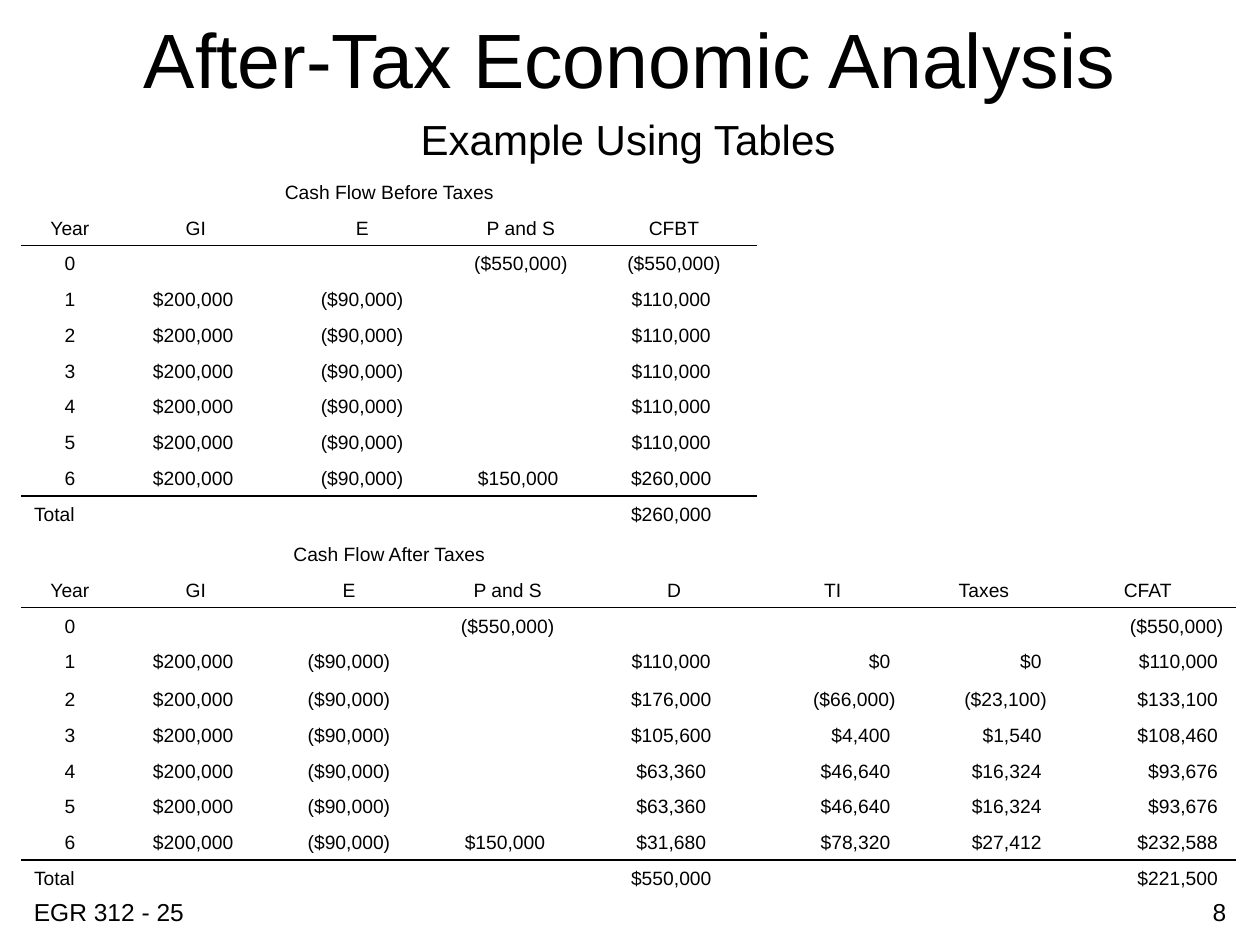
from lxml import etree
from pptx import Presentation
from pptx.dml.color import RGBColor
from pptx.enum.text import MSO_ANCHOR, PP_ALIGN
from pptx.oxml.ns import qn
from pptx.util import Inches, Pt

BLACK = RGBColor(0, 0, 0)
FONT = "Arial"
LEFT, CENTER, RIGHT = PP_ALIGN.LEFT, PP_ALIGN.CENTER, PP_ALIGN.RIGHT

presentation = Presentation()
presentation.slide_width, presentation.slide_height = Inches(10), Inches(7.5)
slide = presentation.slides.add_slide(presentation.slide_layouts[6])


def write(frame, text, size, align):
    frame.text = text
    paragraph = frame.paragraphs[0]
    paragraph.alignment = align
    for run in paragraph.runs:
        run.font.name, run.font.size = FONT, Pt(size)
        run.font.color.rgb = BLACK
    if not text:  # keeps an empty cell as low as a filled one
        etree.SubElement(paragraph._p, qn("a:endParaRPr"), sz=str(size * 100))


def rule(cell, ruled_side):
    """Draw one horizontal border and switch the opposite one off."""
    for position, side in enumerate(("lnT", "lnB")):
        line = etree.Element(qn(f"a:{side}"), w=str(Pt(1)))
        if side == ruled_side:
            fill = etree.SubElement(line, qn("a:solidFill"))
            etree.SubElement(fill, qn("a:srgbClr"), val=str(BLACK))
        else:
            etree.SubElement(line, qn("a:noFill"))
        cell._tc.get_or_add_tcPr().insert(position, line)


# Footer, title and subtitle
for text, left, top, width, height, size, align, anchor in [
    ("EGR 312 - 25", 0.17, 7.07, 2.08, 0.27, 14, LEFT, MSO_ANCHOR.TOP),
    ("8", 7.75, 7.07, 2.08, 0.27, 14, RIGHT, MSO_ANCHOR.TOP),
    ("After-Tax Economic Analysis", 0.75, 0.18, 8.5, 0.55, 44, CENTER, MSO_ANCHOR.MIDDLE),
    ("Example Using Tables", 0.82, 0.85, 8.33, 0.51, 24, CENTER, MSO_ANCHOR.TOP),
]:
    box = slide.shapes.add_textbox(Inches(left), Inches(top), Inches(width), Inches(height))
    box.text_frame.word_wrap = True
    box.text_frame.vertical_anchor = anchor
    write(box.text_frame, text, size, align)

# Cash flows; a trailing space lines figures up with those in brackets
GI, E, START, SALVAGE = "$200,000 ", "($90,000)", "($550,000)", "$150,000 "
before_taxes = [
    ["Cash Flow Before Taxes"],
    ["Year", "GI", "E", "P and S", "CFBT"],
    ["0", "", "", START, START],
    *[[str(year), GI, E, "", "$110,000 "] for year in range(1, 6)],
    ["6", GI, E, SALVAGE, "$260,000 "],
    ["Total", "", "", "", "$260,000 "],
]
after_taxes = [
    ["Cash Flow After Taxes"],
    ["Year", "GI", "E", "P and S", "D", "TI", "Taxes", "CFAT"],
    ["0", "", "", START, "", "", "", START],
    ["1", GI, E, "", "$110,000 ", "$0 ", "$0 ", "$110,000 "],
    ["2", GI, E, "", "$176,000 ", "($66,000)", "($23,100)", "$133,100 "],
    ["3", GI, E, "", "$105,600 ", "$4,400 ", "$1,540 ", "$108,460 "],
    ["4", GI, E, "", "$63,360 ", "$46,640 ", "$16,324 ", "$93,676 "],
    ["5", GI, E, "", "$63,360 ", "$46,640 ", "$16,324 ", "$93,676 "],
    ["6", GI, E, SALVAGE, "$31,680 ", "$78,320 ", "$27,412 ", "$232,588 "],
    ["Total", "", "", "", "$550,000 ", "", "", "$221,500 "],
]

# Table grid
column_widths = [0.77, 1.23, 1.2, 0.21, 1.11, 1.32, 1.2, 1.2, 1.4]
tall_rows = {10: 0.32, 14: 0.3}
row_count = len(before_taxes) + len(after_taxes)
table_height = 5.72
row_height = (table_height - sum(tall_rows.values())) / (row_count - len(tall_rows))
table = slide.shapes.add_table(
    row_count, len(column_widths), Inches(0.17), Inches(1.38),
    Inches(sum(column_widths)), Inches(table_height)).table
table.first_row = table.horz_banding = False
table._tbl.tblPr.find(qn("a:tableStyleId")).text = "{2D5ABB26-0587-4C30-8999-92F81FD0307C}"
for column, width in zip(table.columns, column_widths):
    column.width = Inches(width)
for index, row in enumerate(table.rows):
    row.height = Inches(tall_rows.get(index, row_height))
    for cell in row.cells:
        cell.fill.background()
        cell.vertical_anchor = MSO_ANCHOR.BOTTOM
        write(cell.text_frame, "", 11, CENTER)

# Each section: rows, first table row, columns written, merged columns, ruled columns
for rows, first, columns, merged, ruled in [
    (before_taxes, 0, [0, 1, 2, 4, 5], (2, 3), 6),
    (after_taxes, 10, [0, 1, 2, 3, 5, 6, 7, 8], (3, 4), 9),
]:
    for offset, values in enumerate(rows):
        r = first + offset
        start, end = (0, 5) if offset == 0 else merged
        table.cell(r, start).merge(table.cell(r, end))
        for c, value in zip(columns, values):
            if not value:
                continue
            align = LEFT if value == "Total" else RIGHT if c > 5 and offset > 1 else CENTER
            write(table.cell(r, c).text_frame, value, 11, align)
    # Rules below the header and above the total
    for c in range(ruled):
        for offset in (1, 8):
            rule(table.cell(first + offset, c), "lnB")
            rule(table.cell(first + offset + 1, c), "lnT")

presentation.save("out.pptx")
